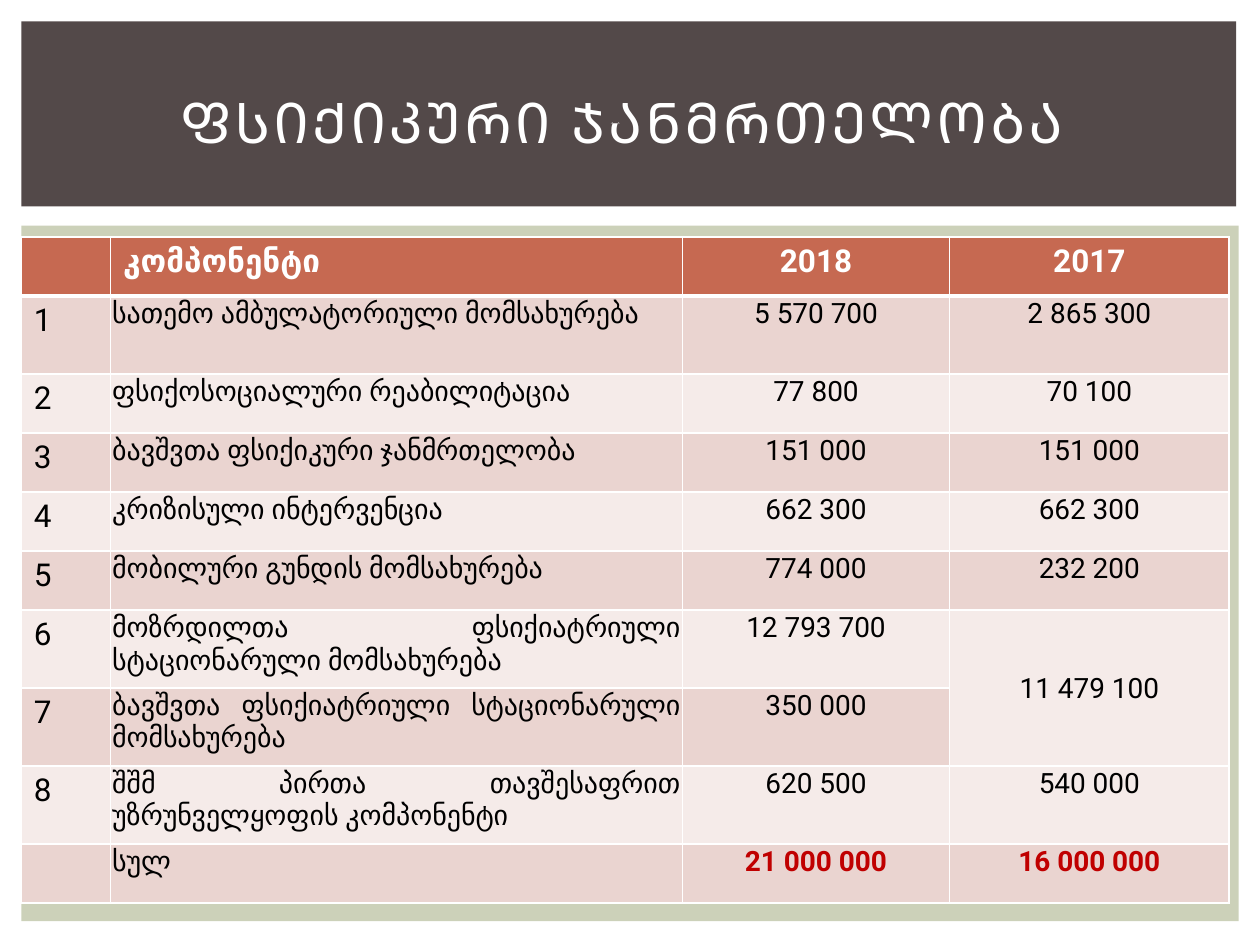
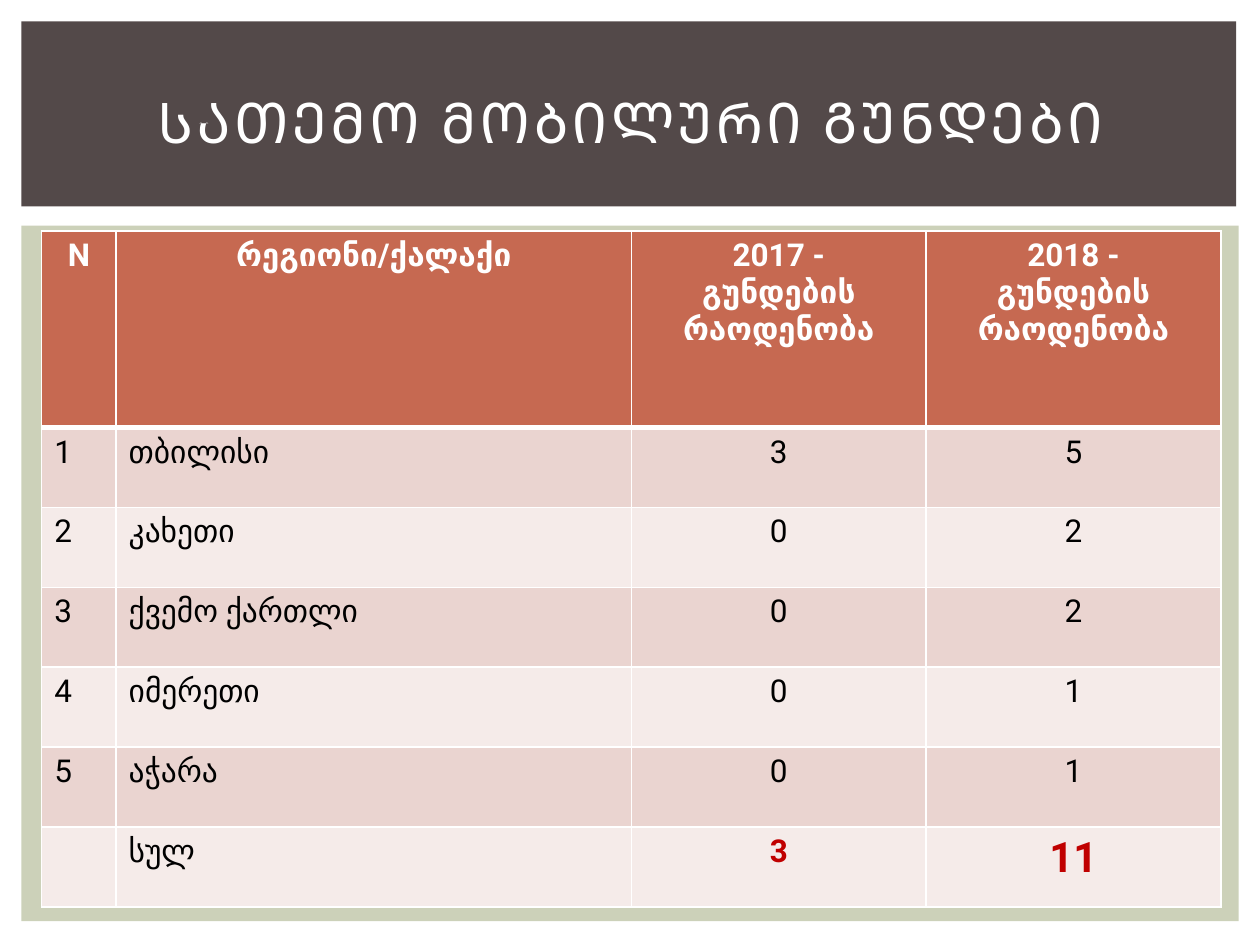
from lxml import etree
from pptx import Presentation
from pptx import util as u
from pptx.dml.color import RGBColor
from pptx.enum import shapes, text
from pptx.oxml.ns import qn

COLORS = {
    "panel": "CCD1B9", "band": "534949", "header": "C66951",
    "odd_row": "EAD4D0", "even_row": "F5EBE9",
    "white": "FFFFFF", "black": "000000", "total": "C00000",
}
LEFT, CENTER, JUSTIFY = text.PP_ALIGN.LEFT, text.PP_ALIGN.CENTER, text.PP_ALIGN.JUSTIFY
TIGHT = {"margin_left": u.Cm(0.03), "margin_right": u.Cm(0.03),
         "margin_top": u.Cm(0.03), "margin_bottom": 0}

# Shared backdrop: left, top, width, height in cm
BACKDROP = {"panel": (0.43, 4.55, 24.54, 14.02), "band": (0.43, 0.43, 24.49, 3.73)}
TITLE_BOX = (1.07, 0.99, 23.29, 2.92)

SLIDES = [
    {
        "title": "ᲤᲡᲘᲥᲘᲙᲣᲠᲘ ᲯᲐᲜᲛᲠᲗᲔᲚᲝᲑᲐ ",
        "at": (0.43, 4.78),
        "columns": (1.8, 11.53, 5.38, 5.64),
        "heights": [1.19, 1.57] + [1.19] * 4 + [1.57] * 3 + [1.19],
        "header_align": (LEFT, LEFT, CENTER, CENTER),
        "body_align": (LEFT, JUSTIFY, CENTER, CENTER),
        "body_size": 16,
        "total_sizes": {},
        "tight": True,
        "merges": [((6, 3), (7, 3))],
        "rows": [
            ("", "კომპონენტი", "2018", "2017"),
            ("1", "სათემო ამბულატორიული მომსახურება", "5 570 700", "2 865 300"),
            ("2", "ფსიქოსოციალური რეაბილიტაცია", "77 800", "70 100"),
            ("3", "ბავშვთა ფსიქიკური ჯანმრთელობა", "151 000", "151 000"),
            ("4", "კრიზისული ინტერვენცია", "662 300", "662 300"),
            ("5", "მობილური გუნდის მომსახურება", "774 000", "232 200"),
            ("6", "მოზრდილთა ფსიქიატრიული სტაციონარული მომსახურება",
             "12 793 700", "11 479 100"),
            ("7", "ბავშვთა ფსიქიატრიული სტაციონარული მომსახურება", "350 000", ""),
            ("8", "შშმ პირთა თავშესაფრით უზრუნველყოფის კომპონენტი",
             "620 500", "540 000"),
            ("", "სულ", "21 000 000", "16 000 000"),
        ],
    },
    {
        "title": "ᲡᲐᲗᲔᲛᲝ ᲛᲝᲑᲘᲚᲣᲠᲘ ᲒᲣᲜᲓᲔᲑᲘ",
        "at": (0.84, 4.66),
        "columns": (1.5, 10.39, 5.94, 5.94),
        "heights": [3.96] + [1.61] * 6,
        "header_align": (CENTER,) * 4,
        "body_align": (LEFT, LEFT, CENTER, CENTER),
        "body_size": 18,
        "total_sizes": {3: 24},
        "tight": False,
        "merges": [],
        "rows": [
            ("N", "რეგიონი/ქალაქი",
             "2017 -\vგუნდების რაოდენობა", "2018 -\vგუნდების რაოდენობა"),
            ("1", "თბილისი", "3", "5"),
            ("2", "კახეთი", "0", "2"),
            ("3", "ქვემო ქართლი", "0", "2"),
            ("4", "იმერეთი", "0", "1"),
            ("5", "აჭარა", "0", "1"),
            ("", "სულ", "3", "11"),
        ],
    },
]


def write(frame, words, align, color, size, bold=False):
    frame.text = words
    paragraph = frame.paragraphs[0]
    paragraph.alignment = align
    for part in [paragraph, *paragraph.runs]:
        for key, value in {"name": "Roboto", "size": u.Pt(size), "bold": bold}.items():
            setattr(part.font, key, value)
        part.font.color.rgb = RGBColor.from_string(COLORS[color])


def paint_cell(cell, color, bottom_width):
    # Borders come before the fill in the cell properties
    properties = cell._tc.get_or_add_tcPr()
    for side, width in {"L": 1, "R": 1, "T": 1, "B": bottom_width}.items():
        border = etree.SubElement(properties, qn(f"a:ln{side}"), w=str(u.Pt(width)))
        fill = etree.SubElement(border, qn("a:solidFill"))
        etree.SubElement(fill, qn("a:srgbClr"), val=COLORS["white"])
    cell.fill.solid()
    cell.fill.fore_color.rgb = RGBColor.from_string(COLORS[color])


deck = Presentation()
deck.slide_width, deck.slide_height = u.Cm(25.4), u.Cm(19.05)

for content in SLIDES:
    slide = deck.slides.add_slide(deck.slide_layouts[6])

    # Panel and title band
    for color, place in BACKDROP.items():
        block = slide.shapes.add_shape(shapes.MSO_SHAPE.RECTANGLE, *map(u.Cm, place))
        block.shadow.inherit = False
        block.fill.solid()
        block.fill.fore_color.rgb = RGBColor.from_string(COLORS[color])
        block.line.fill.background()

    # Budget or team table
    rows, columns = content["rows"], content["columns"]
    size = (sum(columns), sum(content["heights"]))
    table = slide.shapes.add_table(
        len(rows), len(columns), *map(u.Cm, content["at"] + size)).table
    for column, width in zip(table.columns, columns):
        column.width = u.Cm(width)
    for row, height in zip(table.rows, content["heights"]):
        row.height = u.Cm(height)

    last = len(rows) - 1
    for r, row in enumerate(rows):
        for c, words in enumerate(row):
            cell = table.cell(r, c)
            if r == 0:
                paint_cell(cell, "header", 3)
                write(cell.text_frame, words, content["header_align"][c], "white", 18, True)
                continue
            paint_cell(cell, "odd_row" if r % 2 else "even_row", 1)
            is_total = r == last and c > 1
            points = content["body_size"] if c else 18
            if is_total:
                points = content["total_sizes"].get(c, points)
            write(cell.text_frame, words, content["body_align"][c],
                  "total" if is_total else "black", points, is_total)
            if content["tight"] and c:
                for key, value in TIGHT.items():
                    setattr(cell, key, value)

    for first, end in content["merges"]:
        table.cell(*first).merge(table.cell(*end))
        table.cell(*first).vertical_anchor = text.MSO_ANCHOR.MIDDLE

    # Title
    title = slide.shapes.add_textbox(*map(u.Cm, TITLE_BOX)).text_frame
    for key, value in {"word_wrap": True, "vertical_anchor": text.MSO_ANCHOR.MIDDLE}.items():
        setattr(title, key, value)
    write(title, content["title"], CENTER, "white", 32)
    title.paragraphs[0].runs[0]._r.get_or_add_rPr().set("spc", "200")

deck.save("out.pptx")
